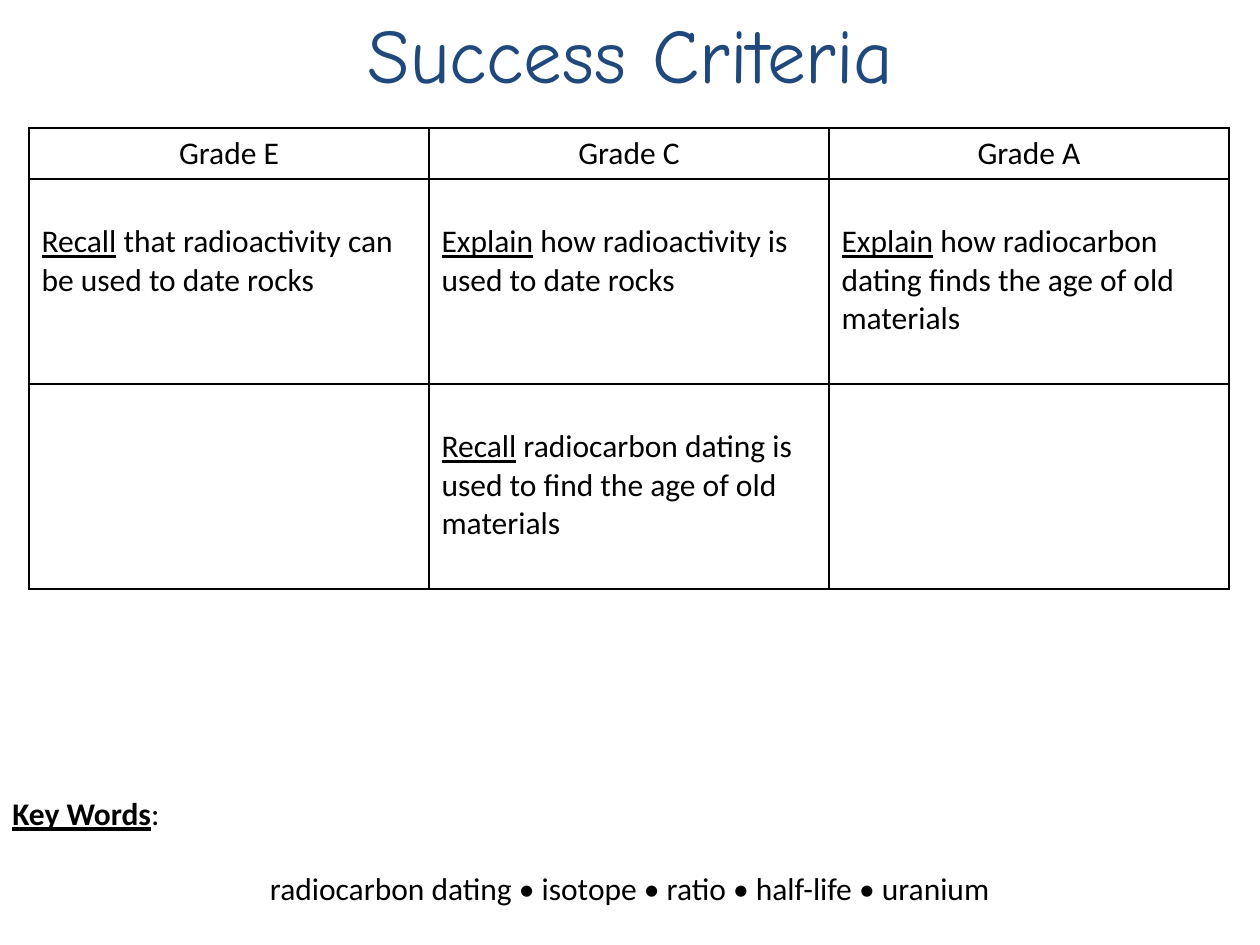
from typing import NamedTuple

from lxml.etree import SubElement
from pptx import Presentation
from pptx.dml.color import RGBColor
from pptx.enum.text import MSO_AUTO_SIZE, PP_ALIGN
from pptx.oxml.ns import qn
from pptx.util import Emu, Pt

EMU_PER_PX = 914400 / 126
BLACK = RGBColor(0x00, 0x00, 0x00)
NAVY = RGBColor(0x1F, 0x49, 0x7D)
BODY_FONT = "Calibri"
TITLE_FONT = "Comic Neue"

COLUMN_WIDTH = 400
HEADER_HEIGHT = 51
CRITERION_HEIGHT = 205
CRITERION_TOP_MARGIN = 44
BORDER_SIDES = ("a:lnL", "a:lnR", "a:lnT", "a:lnB")


class Criterion(NamedTuple):
    row: int
    column: int
    verb: str
    goal: str


GRADES = ("Grade E", "Grade C", "Grade A")
CRITERIA = (
    Criterion(1, 0, "Recall", " that radioactivity can be used to date rocks"),
    Criterion(1, 1, "Explain", " how radioactivity is used to date rocks"),
    Criterion(1, 2, "Explain", " how radiocarbon dating finds the age of old materials"),
    Criterion(2, 1, "Recall", " radiocarbon dating is used to find the age of old materials"),
)
KEY_WORDS = ("radiocarbon dating", "isotope", "ratio", "half-life", "uranium")


def px(length: int) -> Emu:
    return Emu(round(length * EMU_PER_PX))


def add_run(paragraph, text: str, size: int = 18, font: str = BODY_FONT,
            color: RGBColor = BLACK, bold: bool = False, underline: bool = False) -> None:
    run = paragraph.add_run()
    run.text = text
    run.font.size = Pt(size)
    run.font.name = font
    run.font.color.rgb = color
    run.font.bold = bold
    run.font.underline = underline


def add_text_frame(slide, left: int, top: int, width: int, height: int):
    frame = slide.shapes.add_textbox(px(left), px(top), px(width), px(height)).text_frame
    frame.word_wrap = True
    return frame


def outline_cell(cell) -> None:
    """Give the cell thin black borders and no fill."""
    properties = cell._tc.get_or_add_tcPr()
    for side in BORDER_SIDES:
        border = SubElement(properties, qn(side), w=str(Pt(1)))
        fill = SubElement(border, qn("a:solidFill"))
        SubElement(fill, qn("a:srgbClr"), val=str(BLACK))
    cell.fill.background()


def add_title(slide) -> None:
    title = add_text_frame(slide, 64, 0, 1134, 158).paragraphs[0]
    title.alignment = PP_ALIGN.CENTER
    add_run(title, "Success Criteria", 44, TITLE_FONT, NAVY)


def add_criteria_table(slide) -> None:
    row_heights = (HEADER_HEIGHT, CRITERION_HEIGHT, CRITERION_HEIGHT)
    table = slide.shapes.add_table(
        len(row_heights), len(GRADES), px(29), px(128),
        px(COLUMN_WIDTH * len(GRADES)), px(sum(row_heights))).table
    table.first_row = False
    table.horz_banding = False
    for column in table.columns:
        column.width = px(COLUMN_WIDTH)
    for row, height in zip(table.rows, row_heights):
        row.height = px(height)
    for cell in table.iter_cells():
        outline_cell(cell)

    for column_index, grade in enumerate(GRADES):
        heading = table.cell(0, column_index).text_frame.paragraphs[0]
        heading.alignment = PP_ALIGN.CENTER
        add_run(heading, grade)
    for criterion in CRITERIA:
        cell = table.cell(criterion.row, criterion.column)
        cell.margin_top = px(CRITERION_TOP_MARGIN)
        statement = cell.text_frame.paragraphs[0]
        add_run(statement, criterion.verb, underline=True)
        add_run(statement, criterion.goal)


def add_key_words(slide) -> None:
    frame = add_text_frame(slide, 0, 788, 1260, 127)
    frame.auto_size = MSO_AUTO_SIZE.SHAPE_TO_FIT_TEXT
    label = frame.paragraphs[0]
    add_run(label, "Key Words", bold=True, underline=True)
    add_run(label, ":")
    word_list = frame.add_paragraph()
    word_list.alignment = PP_ALIGN.CENTER
    word_list.space_before = Pt(21)
    add_run(word_list, " • ".join(KEY_WORDS))


def main() -> None:
    presentation = Presentation()
    presentation.slide_width = px(1260)
    presentation.slide_height = px(945)
    slide = presentation.slides.add_slide(presentation.slide_layouts[6])
    add_title(slide)
    add_criteria_table(slide)
    add_key_words(slide)
    presentation.save("out.pptx")


if __name__ == "__main__":
    main()
